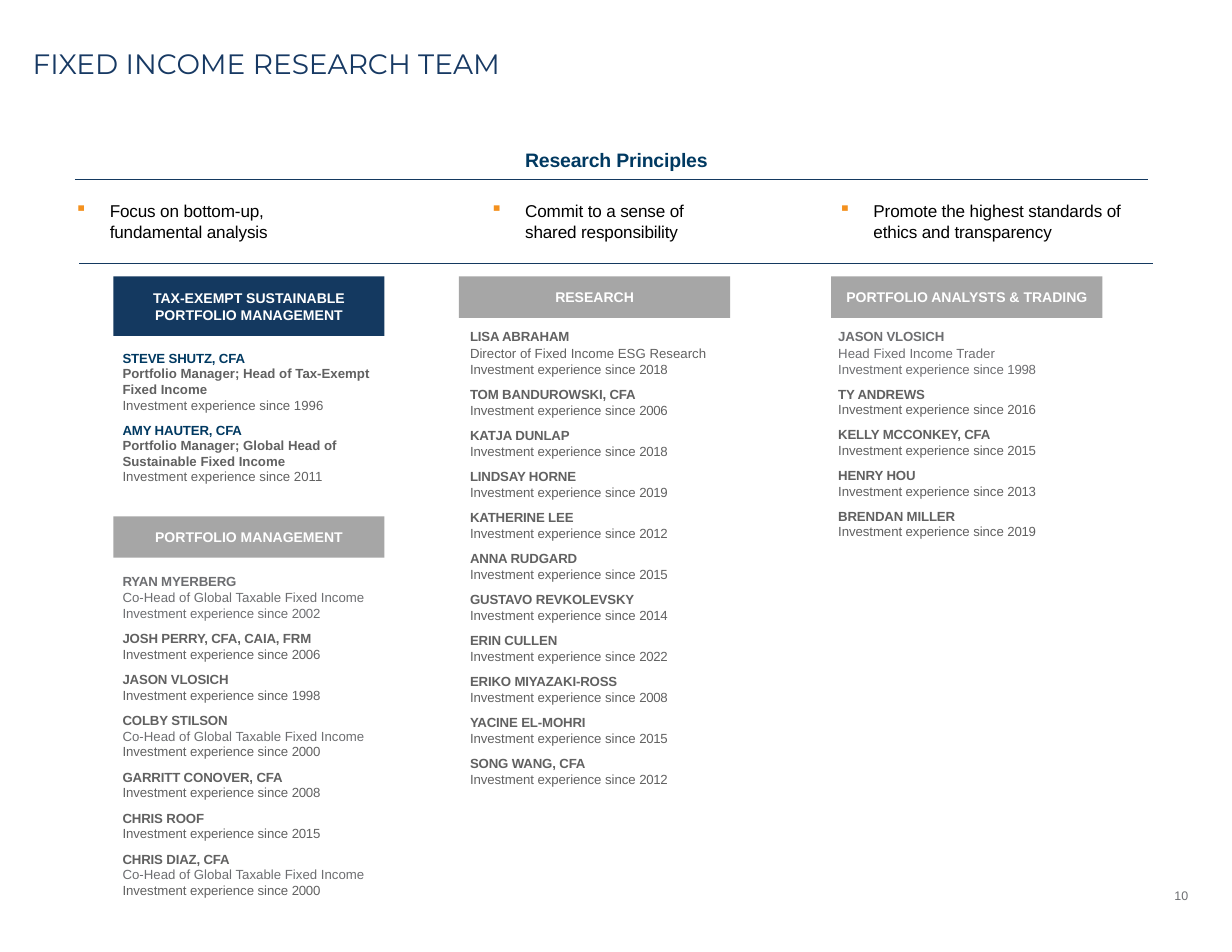
import pptx
import pptx.util
import pptx.dml.color
import pptx.enum.shapes
import pptx.enum.text
import pptx.oxml.ns
from lxml import etree

Cm, Pt = pptx.util.Cm, pptx.util.Pt
ALIGN = pptx.enum.text.PP_ALIGN
qn = pptx.oxml.ns.qn

COLORS = {"title": "173963", "navy": "143960", "name": "003961", "bullet": "F4911E",
          "gray": "A6A6A6", "text": "616161", "light": "6D6E71",
          "white": "FFFFFF", "black": "000000"}

TITLE = "FIXED INCOME RESEARCH TEAM"
HEADING = "Research Principles"
PAGE = "10"
EXPERIENCE = "Investment experience since "
CO_HEAD = "Co-Head of Global Taxable Fixed Income"

# left, width, text
PRINCIPLES = [
    (1.65, 5.6, "Focus on bottom-up, fundamental analysis"),
    (11.07, 5.3, "Commit to a sense of shared responsibility"),
    (18.97, 6.6, "Promote the highest standards of ethics and transparency"),
]
RULES = [(1.7, 4.06), (1.8, 5.97)]  # left, top
RULE_W = 24.34
HEADER_W = 6.15

# header: left, top, height; list: left, top; people: name, role, year
TEAMS = [
    dict(header="TAX-EXEMPT SUSTAINABLE PORTFOLIO MANAGEMENT", box=(2.57, 6.27, 1.35),
         fill="navy", at=(2.74, 7.95), height=3.45, leading=10, role_gap=0, lead=True,
         people=[
             ("STEVE SHUTZ, CFA", "Portfolio Manager; Head of Tax-Exempt Fixed Income", 1996),
             ("AMY HAUTER, CFA", "Portfolio Manager; Global Head of Sustainable Fixed Income", 2011),
         ]),
    dict(header="PORTFOLIO MANAGEMENT", box=(2.57, 11.71, 0.94),
         fill="gray", at=(2.74, 13.0), height=7.77, leading=10.2, role_gap=0, first_light=True,
         people=[
             ("RYAN MYERBERG", CO_HEAD, 2002),
             ("JOSH PERRY, CFA, CAIA, FRM", None, 2006),
             ("JASON VLOSICH", None, 1998),
             ("COLBY STILSON", CO_HEAD, 2000),
             ("GARRITT CONOVER, CFA", None, 2008),
             ("CHRIS ROOF", None, 2015),
             ("CHRIS DIAZ, CFA", CO_HEAD, 2000),
         ]),
    dict(header="RESEARCH", box=(10.41, 6.27, 0.94),
         fill="gray", at=(10.62, 7.44), height=10.77, leading=10.2, role_gap=1, role_color="text",
         people=[
             ("LISA ABRAHAM", "Director of Fixed Income ESG Research", 2018),
             ("TOM BANDUROWSKI, CFA", None, 2006),
             ("KATJA DUNLAP", None, 2018),
             ("LINDSAY HORNE", None, 2019),
             ("KATHERINE LEE", None, 2012),
             ("ANNA RUDGARD", None, 2015),
             ("GUSTAVO REVKOLEVSKY", None, 2014),
             ("ERIN CULLEN", None, 2022),
             ("ERIKO MIYAZAKI-ROSS", None, 2008),
             ("YACINE EL-MOHRI", None, 2015),
             ("SONG WANG, CFA", None, 2012),
         ]),
    dict(header="PORTFOLIO ANALYSTS & TRADING", box=(18.85, 6.27, 0.94),
         fill="gray", at=(18.97, 7.44), height=5.2, leading=10.1, role_gap=1, first_light=True,
         people=[
             ("JASON VLOSICH", "Head Fixed Income Trader", 1998),
             ("TY ANDREWS", None, 2016),
             ("KELLY MCCONKEY, CFA", None, 2015),
             ("HENRY HOU", None, 2013),
             ("BRENDAN MILLER", None, 2019),
         ]),
]


def rgb(name):
    return pptx.dml.color.RGBColor.from_string(COLORS[name])


def add_run(p, text, size, color, bold=False, font="Arial", spacing=0):
    """Spacing is in points between letters."""
    r = p.add_run()
    r.text = text
    r.font.size, r.font.name, r.font.bold = Pt(size), font, bold
    r.font.color.rgb = rgb(color)
    if spacing:
        r._r.get_or_add_rPr().set("spc", str(round(spacing * 100)))


def clear_insets(tf):
    tf.word_wrap = True
    tf.margin_left = tf.margin_top = tf.margin_right = tf.margin_bottom = 0


def add_text_frame(s, left, top, width, height):
    tf = s.shapes.add_textbox(Cm(left), Cm(top), Cm(width), Cm(height)).text_frame
    clear_insets(tf)
    return tf


def add_rule(s, left, top):
    line = s.shapes.add_connector(pptx.enum.shapes.MSO_CONNECTOR.STRAIGHT,
                                  Cm(left), Cm(top), Cm(left + RULE_W), Cm(top))
    line.line.color.rgb = rgb("navy")
    line.line.width = Pt(0.48)
    etree.SubElement(line._element.spPr, qn("a:effectLst"))


def add_principle(s, left, width, text):
    p = add_text_frame(s, left, 4.55, width, 1).paragraphs[0]
    pPr = p._p.get_or_add_pPr()
    pPr.set("marL", str(Cm(0.84)))
    pPr.set("indent", str(-Cm(0.79)))
    color = etree.SubElement(pPr, qn("a:buClr"))
    etree.SubElement(color, qn("a:srgbClr"), val=COLORS["bullet"])
    etree.SubElement(pPr, qn("a:buChar"), char="▪")
    add_run(p, text, 11, "black", spacing=-0.1)


def add_header(s, text, left, top, height, fill):
    sp = s.shapes.add_shape(pptx.enum.shapes.MSO_SHAPE.RECTANGLE,
                            Cm(left), Cm(top), Cm(HEADER_W), Cm(height))
    sp.shadow.inherit = False
    sp.fill.solid()
    sp.fill.fore_color.rgb = rgb(fill)
    sp.line.fill.background()
    tf = sp.text_frame
    clear_insets(tf)
    tf.margin_left = tf.margin_right = Cm(0.1)
    tf.vertical_anchor = pptx.enum.text.MSO_ANCHOR.MIDDLE
    p = tf.paragraphs[0]
    p.alignment = ALIGN.CENTER
    add_run(p, text, 9, "white", bold=True)


def add_people(s, team):
    tf = add_text_frame(s, *team["at"], 6.1, team["height"])
    lead = team.get("lead", False)

    def add_line(gap):
        first = not tf.paragraphs[0].runs
        p = tf.paragraphs[0] if first else tf.add_paragraph()
        p.line_spacing = Pt(team["leading"])
        p.space_before = Pt(0 if first else gap)
        p._p.get_or_add_pPr().set("marL", str(Cm(0.04)))
        return p

    for i, (name, role, year) in enumerate(team["people"]):
        text_color = "light" if i == 0 and team.get("first_light") else "text"
        add_run(add_line(6), name, 8.5, "name" if lead else text_color,
                bold=True, spacing=-0.1)
        if role:
            role_color = "text" if lead else team.get("role_color", "light")
            add_run(add_line(team["role_gap"]), role, 8.5, role_color, bold=lead)
        p = add_line(0)
        add_run(p, EXPERIENCE, 8.5, text_color, spacing=0 if lead else -0.05)
        add_run(p, str(year), 8.5, text_color, spacing=0 if lead else -0.2)


prs = pptx.Presentation()
prs.slide_width, prs.slide_height = Cm(27.94), Cm(21.59)
s = prs.slides.add_slide(prs.slide_layouts[6])

p = add_text_frame(s, 0.74, 1.14, 19.1, 0.69).paragraphs[0]
p.line_spacing = 0.9
add_run(p, TITLE, 18, "title", font="Montserrat")

p = add_text_frame(s, 11.91, 3.35, 4.6, 0.6).paragraphs[0]
add_run(p, HEADING, 12.5, "name", bold=True, spacing=-0.1)

for rule in RULES:
    add_rule(s, *rule)
for principle in PRINCIPLES:
    add_principle(s, *principle)
for team in TEAMS:
    add_header(s, team["header"], *team["box"], team["fill"])
    add_people(s, team)

p = add_text_frame(s, 20.17, 20.14, 6.78, 0.9).paragraphs[0]
p.alignment = ALIGN.RIGHT
add_run(p, PAGE, 8, "light")

prs.save("out.pptx")
